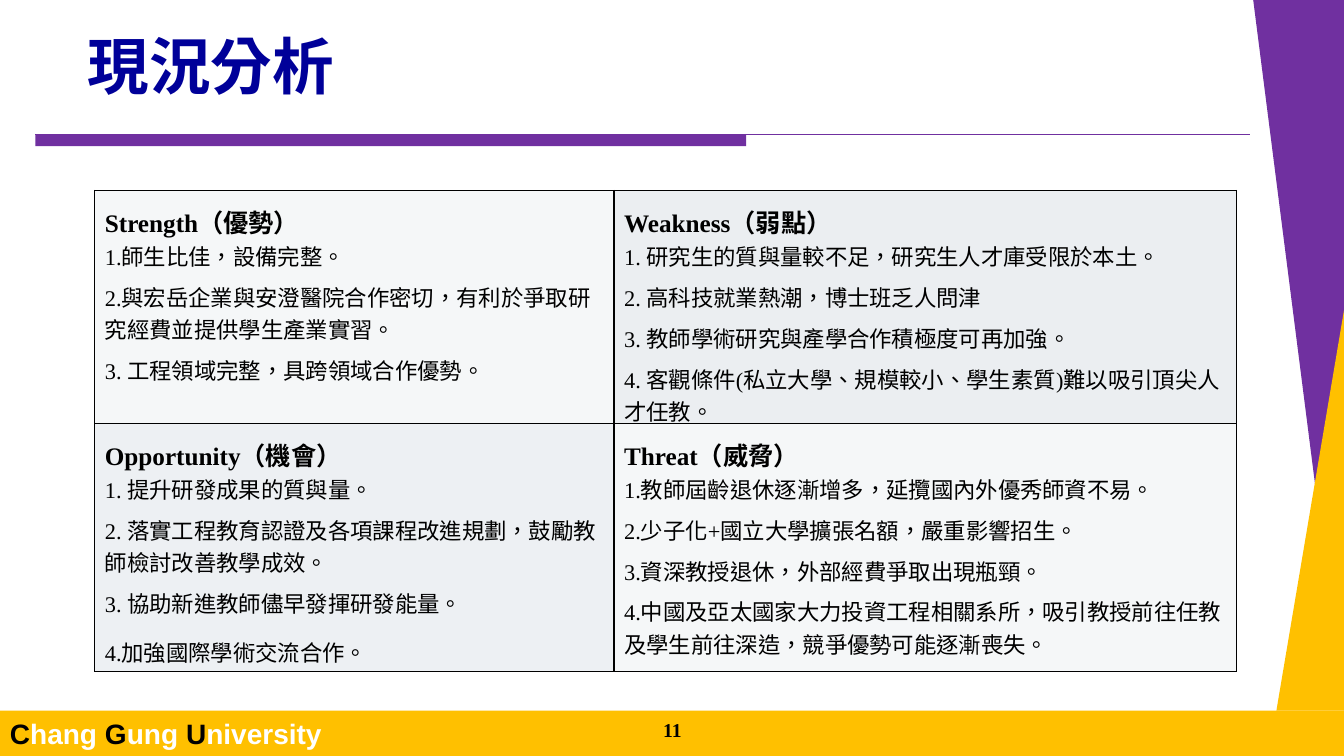
import pptx
import pptx.chart.data
import pptx.dml.color
import pptx.enum.lang
import pptx.enum.shapes
import pptx.enum.text
import pptx.oxml.ns
import pptx.util
from lxml import etree
from pptx.util import Inches

PURPLE, GOLD, NAVY, BLACK, WHITE = "7030A0", "FFC000", "000099", "000000", "FFFFFF"
SERIF, SANS, CJK = "Times New Roman", "Arial", "Noto Sans CJK SC"
PAGE_WIDTH, PAGE_HEIGHT, FOOTER_TOP = 13.33, 7.5, 7.05

SWOT = [
    [
        ("Strength（優勢）", "F5F7F8", [
            "1.師生比佳，設備完整。",
            "2.與宏岳企業與安澄醫院合作密切，有利於爭取研究經費並提供學生產業實習。",
            "3. 工程領域完整，具跨領域合作優勢。"]),
        ("Weakness（弱點）", "EBEEF1", [
            "1. 研究生的質與量較不足，研究生人才庫受限於本土。",
            "2. 高科技就業熱潮，博士班乏人問津",
            "3. 教師學術研究與產學合作積極度可再加強。",
            "4. 客觀條件(私立大學、規模較小、學生素質)難以吸引頂尖人才任教。"]),
    ],
    [
        ("Opportunity（機會）", "EDF0F3", [
            "1. 提升研發成果的質與量。",
            "2. 落實工程教育認證及各項課程改進規劃，鼓勵教師檢討改善教學成效。",
            "3. 協助新進教師儘早發揮研發能量。",
            "4.加強國際學術交流合作。"]),
        ("Threat（威脅）", "F5F7F8", [
            "1.教師屆齡退休逐漸增多，延攬國內外優秀師資不易。",
            "2.少子化+國立大學擴張名額，嚴重影響招生。",
            "3.資深教授退休，外部經費爭取出現瓶頸。",
            "4.中國及亞太國家大力投資工程相關系所，吸引教授前往任教及學生前往深造，競爭優勢可能逐漸喪失。"]),
    ],
]


def rgb(color):
    """Turn a hex string into a colour."""
    return pptx.dml.color.RGBColor.from_string(color)


def child(parent, tag, **attributes):
    """Append a DrawingML element to a parent."""
    return etree.SubElement(parent, pptx.oxml.ns.qn(tag), attributes)


def style_run(run, size, font, color=BLACK, bold=False):
    """Set the look of one run."""
    run.font.size = pptx.util.Pt(size)
    run.font.name = font
    run.font.bold = bold
    run.font.color.rgb = rgb(color)
    run.font.language_id = pptx.enum.lang.MSO_LANGUAGE_ID.TRADITIONAL_CHINESE


def paint(shape, color):
    """Give a shape a flat fill without outline or shadow."""
    shape.shadow.inherit = False
    shape.fill.solid()
    shape.fill.fore_color.rgb = rgb(color)
    shape.line.fill.background()
    return shape


def add_bar(slide, left, top, width, height, color):
    """Add a flat rectangle."""
    rectangle = pptx.enum.shapes.MSO_SHAPE.RECTANGLE
    return paint(slide.shapes.add_shape(
        rectangle, Inches(left), Inches(top), Inches(width), Inches(height)), color)


def add_wedge(slide, corners, color):
    """Add a flat polygon through the given corners."""
    start, *others = [(Inches(x), Inches(y)) for x, y in corners]
    builder = slide.shapes.build_freeform(*start)
    builder.add_line_segments(others, close=True)
    paint(builder.convert_to_shape(), color)


def add_rule(slide, left, right, top, color):
    """Add a thin horizontal line."""
    rule = slide.shapes.add_connector(
        pptx.enum.shapes.MSO_CONNECTOR.STRAIGHT,
        Inches(left), Inches(top), Inches(right), Inches(top))
    rule.line.color.rgb = rgb(color)
    rule.line.width = pptx.util.Pt(0.75)
    child(rule._element.spPr, "a:effectLst")


def add_label(slide, text, left, top, width, height, size, font, color):
    """Add a bold one-line text box and return its paragraph."""
    frame = slide.shapes.add_textbox(
        Inches(left), Inches(top), Inches(width), Inches(height)).text_frame
    frame.word_wrap = True
    frame.text = text
    paragraph = frame.paragraphs[0]
    style_run(paragraph.runs[0], size, font, color, True)
    return paragraph


def add_footer(slide):
    """Add the gold footer with the initials of the university in black."""
    footer = add_bar(slide, 0, FOOTER_TOP, PAGE_WIDTH, PAGE_HEIGHT - FOOTER_TOP, GOLD)
    footer.text_frame.vertical_anchor = pptx.enum.text.MSO_ANCHOR.MIDDLE
    paragraph = footer.text_frame.paragraphs[0]
    paragraph.alignment = pptx.enum.text.PP_ALIGN.LEFT
    for piece, color in [("C", BLACK), ("hang ", WHITE), ("G", BLACK),
                         ("ung ", WHITE), ("U", BLACK), ("niversity", WHITE)]:
        run = paragraph.add_run()
        run.text = piece
        style_run(run, 20, SANS, color, True)


def add_borders(cell):
    """Draw a thin black line on all sides of a cell."""
    properties = cell._tc.get_or_add_tcPr()
    for position, side in enumerate(["a:lnL", "a:lnR", "a:lnT", "a:lnB"]):
        border = child(properties, side, w=str(pptx.util.Pt(1)))
        child(child(border, "a:solidFill"), "a:srgbClr", val=BLACK)
        properties.insert(position, border)


def fill_quadrant(cell, heading, color, points):
    """Write a heading and its numbered points into a cell."""
    cell.fill.solid()
    cell.fill.fore_color.rgb = rgb(color)
    add_borders(cell)
    cell.margin_top = Inches(0.13)
    frame = cell.text_frame
    frame.text = "\n".join([heading + "\v" + points[0]] + points[1:])
    for index, paragraph in enumerate(frame.paragraphs):
        if index:
            paragraph.space_before = pptx.util.Pt(6)
        if heading.startswith("Opportunity") and index >= 2:
            paragraph.space_after = pptx.util.Pt(6)
        for run in paragraph.runs:
            is_heading = run.text == heading
            style_run(run, 18 if is_heading else 16, SERIF, BLACK, is_heading)


def add_swot_table(slide):
    """Add the two by two table of the analysis."""
    widths, heights = [5.15, 6.17], [2.31, 2.46]
    table = slide.shapes.add_table(
        2, 2, Inches(0.94), Inches(1.89),
        Inches(sum(widths)), Inches(sum(heights))).table
    table.first_row = table.horz_banding = False
    for column, width in zip(table.columns, widths):
        column.width = Inches(width)
    for row, height, quadrants in zip(table.rows, heights, SWOT):
        row.height = Inches(height)
        for cell, quadrant in zip(row.cells, quadrants):
            fill_quadrant(cell, *quadrant)


def main():
    """Build the slide and save it."""
    deck = pptx.Presentation()
    deck.slide_width, deck.slide_height = Inches(PAGE_WIDTH), Inches(PAGE_HEIGHT)
    slide = deck.slides.add_slide(deck.slide_layouts[6])
    add_footer(slide)
    add_wedge(slide, [(PAGE_WIDTH, FOOTER_TOP), (12.43, 0), (PAGE_WIDTH, 0)], PURPLE)
    add_wedge(slide, [(PAGE_WIDTH, 3.08), (12.66, FOOTER_TOP), (PAGE_WIDTH, FOOTER_TOP)], GOLD)
    add_bar(slide, 0.35, 1.33, 7.05, 0.12, PURPLE)
    add_rule(slide, 0.35, 12.4, 1.33, PURPLE)
    title = add_label(slide, "現況分析", 0.77, 0.31, 8.75, 1.05, 44, CJK, NAVY)
    title.line_spacing = 0.9
    child(title.runs[0].font._element, "a:ea", typeface=CJK)
    add_swot_table(slide)
    page_number = add_label(slide, "11", 5.29, 7.07, 2.76, 0.28, 14, SERIF, BLACK)
    page_number.alignment = pptx.enum.text.PP_ALIGN.CENTER
    deck.save("out.pptx")


if __name__ == "__main__":
    main()
